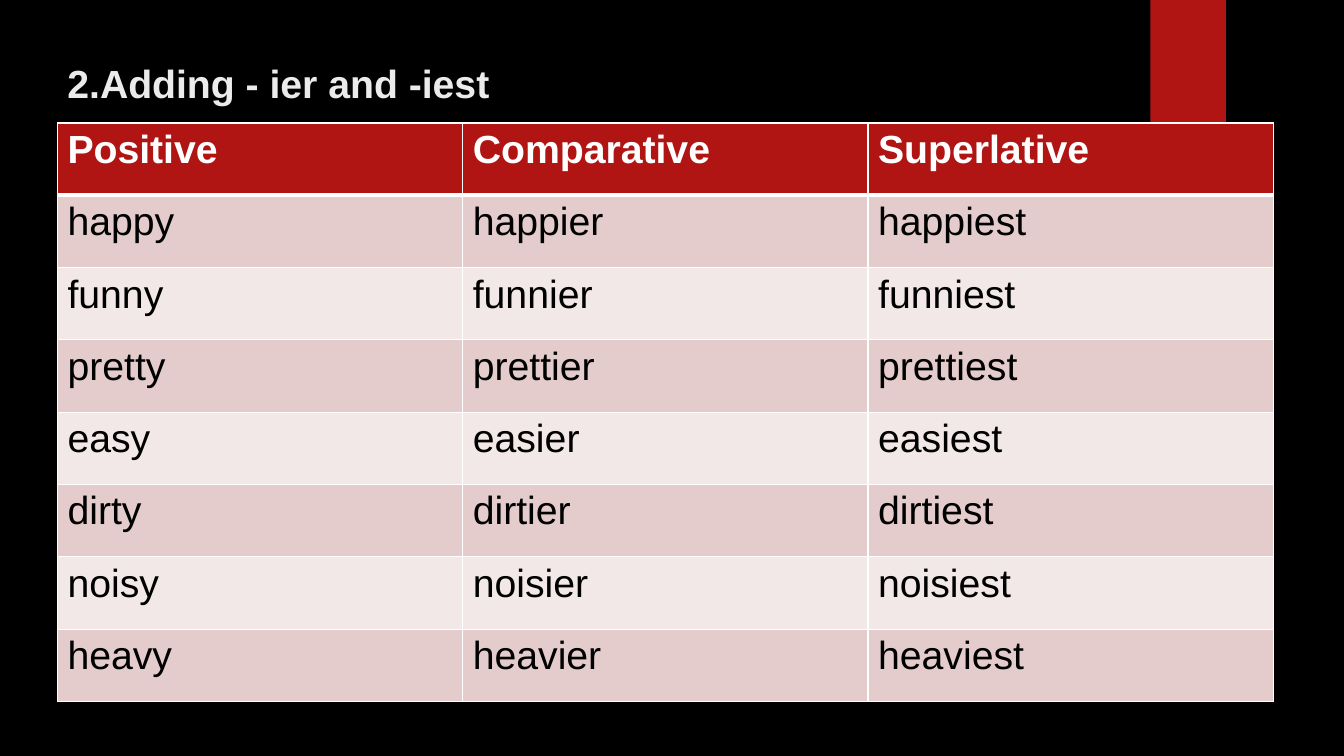
from lxml.etree import SubElement as Sub
from pptx import Presentation
from pptx.dml.color import RGBColor as RGB
from pptx.enum.shapes import MSO_SHAPE as Shape
from pptx.enum.text import MSO_ANCHOR as Anchor
from pptx.oxml.ns import qn
from pptx.util import Inches as In, Pt

BLACK = RGB(0x00, 0x00, 0x00)
WHITE = RGB(0xFF, 0xFF, 0xFF)
PALE = RGB(0xEB, 0xEB, 0xEB)
RED = RGB(0xB0, 0x15, 0x13)
ROSE = RGB(0xE4, 0xCC, 0xCC)
BLUSH = RGB(0xF2, 0xE8, 0xE7)

WIDE, HIGH = 13.33, 7.5
LEFT, TOP = 0.57, 1.22
COL, ROW = 4.02, 0.7175

HEADS = ["Positive", "Comparative", "Superlative"]
WORDS = ["happy", "funny", "pretty", "easy", "dirty", "noisy", "heavy"]


def write(frame, text, size=28, color=BLACK, bold=False, font="Arial"):
    run = frame.paragraphs[0].add_run()
    run.text = text
    run.font.name = font
    run.font.size = Pt(size)
    run.font.bold = bold
    run.font.color.rgb = color


def paint(thing, color):
    thing.fill.solid()
    thing.fill.fore_color.rgb = color


def edge(cell, **widths):
    """Draw white cell borders; keys are L, R, T, B and widths are points."""
    props = cell._tc.get_or_add_tcPr()
    for side, width in widths.items():
        line = Sub(props, qn(f"a:ln{side}"), w=str(Pt(width)))
        fill = Sub(line, qn("a:solidFill"))
        Sub(fill, qn("a:srgbClr"), val=str(WHITE))


def add_tab(slide):
    """Add the red tab that hangs from the top edge."""
    tab = slide.shapes.add_shape(
        Shape.RECTANGLE, In(11.41), 0, In(0.75), In(HIGH / 6))
    tab.shadow.inherit = False
    paint(tab, RED)
    tab.line.fill.background()


def add_title(slide, text):
    box = slide.shapes.add_textbox(In(LEFT), In(0.5), In(10.42), In(0.72))
    frame = box.text_frame
    frame.word_wrap = True
    frame.vertical_anchor = Anchor.TOP
    frame.margin_top = In(0.09)
    write(frame, text, color=PALE, bold=True)


def add_grid(slide, rows):
    count, span = len(rows), len(rows[0])
    grid = slide.shapes.add_table(
        count, span, In(LEFT), In(TOP), In(COL * span), In(ROW * count)).table
    for col in grid.columns:
        col.width = In(COL)
    for i, row in enumerate(rows):
        grid.rows[i].height = In(ROW)
        head = i == 0
        for j, text in enumerate(row):
            cell = grid.cell(i, j)
            edge(cell, L=1, R=1, T=3 if i == 1 else 1, B=3 if head else 1)
            paint(cell, RED if head else ROSE if i % 2 else BLUSH)
            write(cell.text_frame, text,
                  color=WHITE if head else BLACK, bold=head)


def main():
    deck = Presentation()
    deck.slide_width, deck.slide_height = In(WIDE), In(HIGH)
    slide = deck.slides.add_slide(deck.slide_layouts[6])
    paint(slide.background, BLACK)
    add_tab(slide)
    add_title(slide, "2.Adding - ier and -iest")
    forms = [[word, word[:-1] + "ier", word[:-1] + "iest"] for word in WORDS]
    add_grid(slide, [HEADS] + forms)
    deck.save("out.pptx")


if __name__ == "__main__":
    main()
